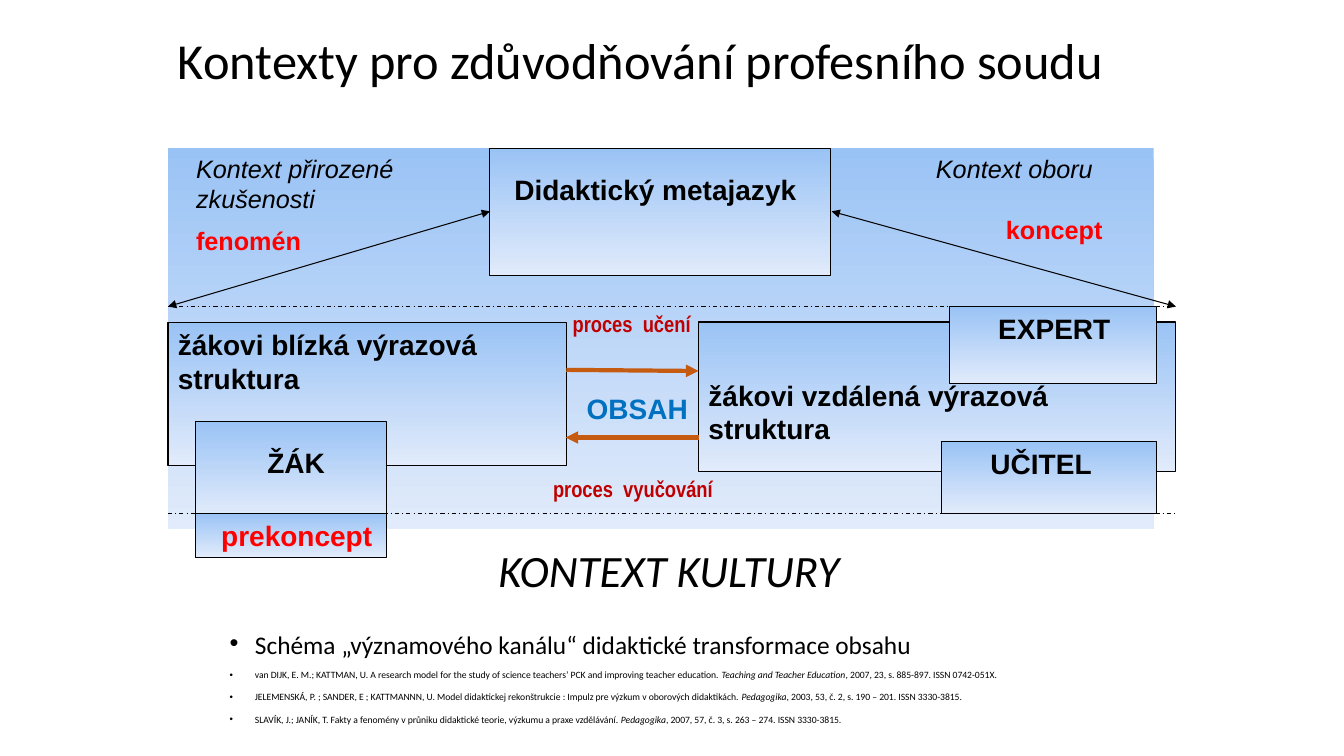
from dataclasses import dataclass

from lxml import etree
from pptx import Presentation
from pptx.dml.color import RGBColor
from pptx.enum.dml import MSO_LINE
from pptx.enum.shapes import MSO_CONNECTOR, MSO_SHAPE
from pptx.enum.text import MSO_ANCHOR
from pptx.oxml.ns import qn
from pptx.util import Pt

RECTANGLE = MSO_SHAPE.RECTANGLE
STRAIGHT = MSO_CONNECTOR.STRAIGHT
DASH_DOT = MSO_LINE.DASH_DOT
MIDDLE, TOP = MSO_ANCHOR.MIDDLE, MSO_ANCHOR.TOP

BLACK, RED, DARK_RED = "000000", "FF0000", "C00000"
BLUE, ORANGE = "0070C0", "C55A11"
GRADIENT = ("9AC3F5", "E1EBFB")
LEFT, RIGHT = 120, 840
UPPER_BORDER, LOWER_BORDER = 219, 366.5


@dataclass(frozen=True)
class Span:
    text: str
    size: float = 20
    color: str = BLACK
    bold: bool = False
    italic: bool = False
    font: str = "Arial"


@dataclass(frozen=True)
class Para:
    spans: tuple[Span, ...]
    before: float = 0
    after: float = 0
    indent: float = 0
    spacing: float = 1
    bullet: bool = False


@dataclass(frozen=True)
class Box:
    left: float
    top: float
    width: float
    height: float
    paras: tuple[Para, ...] = ()
    inset_left: float = 7.2
    inset_top: float = 3.6
    panel: bool = False
    outlined: bool = True
    wrap: bool = True
    anchor: MSO_ANCHOR = TOP


@dataclass(frozen=True)
class Line:
    start: tuple[float, float]
    end: tuple[float, float]
    color: str = BLACK
    width: float = 0.75
    dashed: bool = False
    arrows: tuple[str, ...] = ()


def bold(text: str, color: str = BLACK, size: float = 20, font: str = "Arial") -> tuple[Para, ...]:
    return (Para((Span(text, size, color, bold=True, font=font),)),)


def bulleted(*spans: Span) -> Para:
    return Para(spans, before=10, indent=18, spacing=0.7, bullet=True)


def reference(work: str, journal: str, details: str) -> Para:
    return bulleted(
        Span(work, 6.9, font="Calibri"),
        Span(journal, 6.9, italic=True, font="Calibri"),
        Span(details, 6.9, font="Calibri"),
    )


def context(text: str, after: float = 0) -> Para:
    return Para((Span(text, 18, italic=True),), after=after)


TITLE = Span("Kontexty pro zdůvodňování profesního soudu", 36, font="Calibri")
SOURCES = (
    bulleted(Span("Schéma „významového kanálu“ didaktické transformace obsahu", 18.1, font="Calibri")),
    reference(
        "van DIJK, E. M.; KATTMAN, U. A research model for the study of science teachers’ PCK "
        "and improving teacher education. ",
        "Teaching and Teacher Education",
        ", 2007, 23, s. 885-897. ISSN 0742-051X.",
    ),
    reference(
        "JELEMENSKÁ, P. ; SANDER, E ; KATTMANNN, U. Model didaktickej rekonštrukcie : "
        "Impulz pre výzkum v oborových didaktikách. ",
        "Pedagogika",
        ", 2003, 53, č. 2, s. 190 – 201. ISSN 3330-3815.",
    ),
    reference(
        "SLAVÍK, J.; JANÍK, T. Fakty a fenomény v průniku didaktické teorie, výzkumu a praxe vzdělávání. ",
        "Pedagogika",
        ", 2007, 57, č. 3, s. 263 – 274. ISSN 3330-3815.",
    ),
)
EXPERIENCE = (
    context("Kontext přirozené zkušenosti", after=8),
    Para((Span("fenomén", 18, RED, bold=True),), after=8),
)
DISCIPLINE = (
    context("Kontext oboru"),
    Para((Span("koncept", 18, RED, bold=True),), before=22, indent=50),
)
CULTURE = (Para((Span("KONTEXT KULTURY", 32, italic=True, font="Calibri"),)),)

BACK_BOXES = (
    Box(LEFT, 0, 704, 90, (Para((TITLE,), spacing=0.9),), anchor=MIDDLE),
    Box(157, 451.5, 648, 79, SOURCES),
    Box(LEFT, 106, 704, 272, panel=True, outlined=False),
    Box(499, 230, 341, 106.5, bold("žákovi vzdálená výrazová struktura"), inset_top=40, panel=True),
    Box(LEFT, 230.5, 284.5, 102, bold("žákovi blízká výrazová struktura"), panel=True),
    Box(350, 106, 243.5, 91, bold("Didaktický metajazyk"), 17.4, 17.4, panel=True),
    Box(140, 301, 136, 67.5, bold("ŽÁK"), 51, 17.4, panel=True),
    Box(678, UPPER_BORDER, 148, 55, bold("EXPERT"), 35, panel=True),
)
LINES = (
    Line((350, 151), (LEFT, UPPER_BORDER), arrows=("headEnd", "tailEnd")),
    Line((594, 151), (RIGHT, UPPER_BORDER), arrows=("headEnd", "tailEnd")),
    Line((LEFT, UPPER_BORDER), (RIGHT, UPPER_BORDER), dashed=True),
    Line((LEFT, LOWER_BORDER), (RIGHT, LOWER_BORDER), dashed=True),
    Line((404.5, 264.2), (499, 265), ORANGE, 3, arrows=("tailEnd",)),
    Line((499, 312.5), (404, 312.5), ORANGE, 3, arrows=("tailEnd",)),
)
FRONT_BOXES = (
    Box(133, 106, 163, 91, EXPERIENCE),
    Box(661.5, 106, 149, 113, DISCIPLINE),
    Box(398, 218, 122, 45, bold("proces  učení", DARK_RED, 16, "Arial Narrow"), 11),
    Box(380, 336, 154, 24, bold("proces  vyučování", DARK_RED, 16, "Arial Narrow"), 15),
    Box(672.5, 315.5, 153.5, 51, bold("UČITEL"), 35, panel=True),
    Box(140, LOWER_BORDER, 136, 31.5, bold("prekoncept", RED), 18, panel=True),
    Box(412, 276, 88, 31.5, bold("OBSAH", BLUE), wrap=False),
    Box(349, 384, 261, 46, CULTURE, wrap=False),
)


def rgb(code: str) -> RGBColor:
    return RGBColor.from_string(code)


def paint_panel(shape, outlined: bool) -> None:
    shape.shadow.inherit = False
    shape.fill.gradient()
    shape.fill.gradient_angle = 270
    for stop, code in zip(shape.fill.gradient_stops, GRADIENT):
        stop.color.rgb = rgb(code)
    if outlined:
        shape.line.color.rgb = rgb(BLACK)
        shape.line.width = Pt(0.75)
    else:
        shape.line.fill.background()


def write_para(paragraph, para: Para) -> None:
    paragraph.line_spacing = para.spacing
    paragraph.space_before, paragraph.space_after = Pt(para.before), Pt(para.after)
    properties = paragraph._p.get_or_add_pPr()
    properties.set("algn", "l")
    properties.set("marL", str(Pt(para.indent)))
    if para.bullet:
        properties.set("indent", str(-Pt(para.indent)))
        etree.SubElement(properties, qn("a:buFont"), typeface="Arial")
        etree.SubElement(properties, qn("a:buChar"), char="•")
    for span in para.spans:
        run = paragraph.add_run()
        run.text = span.text
        font = run.font
        font.name, font.size = span.font, Pt(span.size)
        font.bold, font.italic = span.bold, span.italic
        font.color.rgb = rgb(span.color)


def draw_box(page, box: Box) -> None:
    place = [Pt(length) for length in (box.left, box.top, box.width, box.height)]
    if box.panel:
        shape = page.shapes.add_shape(RECTANGLE, *place)
        paint_panel(shape, box.outlined)
    else:
        shape = page.shapes.add_textbox(*place)
    frame = shape.text_frame
    frame.word_wrap = box.wrap
    frame.vertical_anchor = box.anchor
    frame.margin_left, frame.margin_top = Pt(box.inset_left), Pt(box.inset_top)
    for index, para in enumerate(box.paras):
        write_para(frame.add_paragraph() if index else frame.paragraphs[0], para)


def draw_line(page, line: Line) -> None:
    ends = [Pt(length) for length in (*line.start, *line.end)]
    connector = page.shapes.add_connector(STRAIGHT, *ends)
    connector.line.color.rgb = rgb(line.color)
    connector.line.width = Pt(line.width)
    if line.dashed:
        connector.line.dash_style = DASH_DOT
    outline = connector.line._get_or_add_ln()
    for arrow in line.arrows:
        etree.SubElement(outline, qn(f"a:{arrow}"), type="triangle")
    etree.SubElement(connector._element.spPr, qn("a:effectLst"))


def main() -> None:
    deck = Presentation()
    deck.slide_width, deck.slide_height = Pt(960), Pt(540)
    page = deck.slides.add_slide(deck.slide_layouts[6])
    for box in BACK_BOXES:
        draw_box(page, box)
    for line in LINES:
        draw_line(page, line)
    for box in FRONT_BOXES:
        draw_box(page, box)
    deck.save("out.pptx")


if __name__ == "__main__":
    main()
